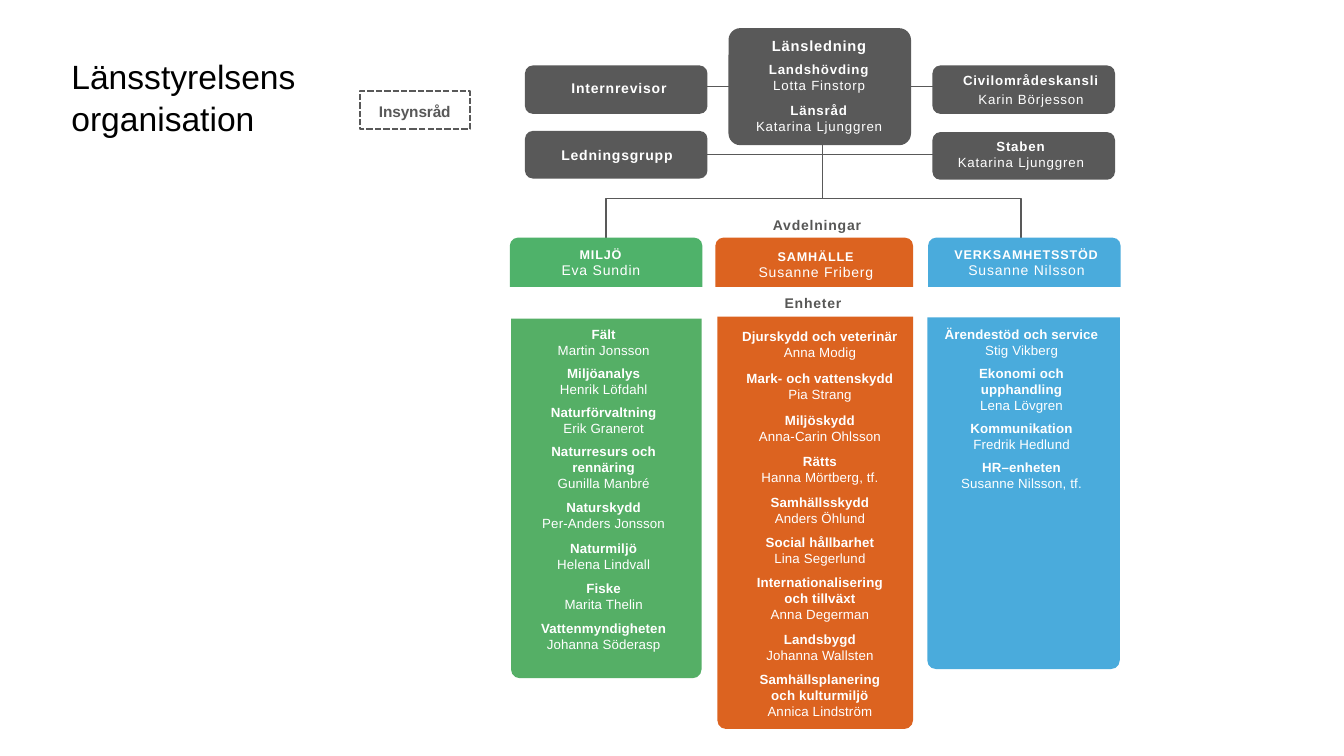
from copy import deepcopy

from lxml import etree
from pptx import Presentation
from pptx.dml.color import RGBColor
from pptx.enum.dml import MSO_LINE
from pptx.enum.shapes import MSO_CONNECTOR, MSO_SHAPE
from pptx.enum.text import PP_ALIGN
from pptx.oxml.ns import qn
from pptx.util import Cm, Pt

BLACK = RGBColor(0x00, 0x00, 0x00)
WHITE = RGBColor(0xFF, 0xFF, 0xFF)
GREY = RGBColor(0x59, 0x59, 0x59)
LABEL_GREY = RGBColor(0x57, 0x57, 0x56)
HEADER_GREEN = RGBColor(0x4F, 0xB2, 0x6A)
LIST_GREEN = RGBColor(0x55, 0xAF, 0x66)
BLUE = RGBColor(0x4A, 0xAB, 0xDC)
ORANGE = RGBColor(0xDC, 0x63, 0x20)
ROUNDED = MSO_SHAPE.ROUNDED_RECTANGLE
HALF_ROUNDED = MSO_SHAPE.ROUND_2_SAME_RECTANGLE
STRAIGHT = MSO_CONNECTOR.STRAIGHT
CENTER = PP_ALIGN.CENTER
LEFT = PP_ALIGN.LEFT

deck = Presentation()
deck.slide_width, deck.slide_height = Cm(33.87), Cm(19.05)
page = deck.slides.add_slide(deck.slide_layouts[6])


def add_panel(kind, area, color, corners):
    """Filled box; corners holds the corner radii in centimetres."""
    panel = page.shapes.add_shape(kind, *[Cm(value) for value in area])
    for index, radius in enumerate(corners):
        panel.adjustments[index] = radius / min(area[2:])
    panel.shadow.inherit = False
    panel.fill.solid()
    panel.fill.fore_color.rgb = color
    panel.line.fill.background()


def add_text(area, entries, sizes=(9.5, 9.5), color=WHITE, tracking=0.6, before=(0, 0),
             after=0, align=CENTER, line_height=None):
    """One paragraph per (heading, name); before is for the first four and the rest."""
    box = page.shapes.add_textbox(*[Cm(value) for value in area])
    frame = box.text_frame
    frame.word_wrap = True
    frame.margin_left = frame.margin_right = frame.margin_bottom = 0
    frame.margin_top = Cm(0.03)
    for index, (heading, name) in enumerate(entries):
        para = frame.add_paragraph() if index else frame.paragraphs[0]
        para.text = f"{heading}\n{name}" if name else heading
        para.alignment = align
        para.space_before = Pt(before[index >= 4] if index else 0)
        para.space_after = Pt(after)
        if line_height:
            para.line_spacing = Pt(line_height)
        for span in para.runs:
            is_name = bool(name) and span.text == name
            span.font.name = "Arial"
            span.font.size = Pt(sizes[is_name])
            span.font.bold = align == CENTER and not is_name
            span.font.color.rgb = color
            span.font._element.set("spc", str(round(tracking * 100)))
        # Line breaks take the size of the heading
        for line_break in para._p.findall(qn("a:br")):
            line_break.append(deepcopy(para.runs[0].font._element))


# Title
add_text((1.8, 1.34, 7, 2.15), [("Länsstyrelsens\norganisation", "")], sizes=(24, 24),
         color=BLACK, tracking=0, align=LEFT, line_height=30)

# Lines of the chart: a bracket to the departments, then straight links
builder = page.shapes.build_freeform(Cm(15.27), Cm(7.11), scale=1.0)
builder.add_line_segments(
    [(Cm(x), Cm(y)) for x, y in ((15.27, 5), (25.73, 5), (25.73, 7.11))], close=False)
bracket = builder.convert_to_shape()
bracket.shadow.inherit = False
bracket.fill.background()
bracket.line.color.rgb = GREY
bracket.line.width = Pt(1)

links = [(17.63, 3.89, 23.5, 3.89), (19.94, 2.18, 24.97, 2.18),
         (13.69, 2.18, 18.72, 2.18), (20.73, 1.04, 20.73, 5)]
for ends in links:
    link = page.shapes.add_connector(STRAIGHT, *[Cm(value) for value in ends])
    link.line.color.rgb = GREY
    link.line.width = Pt(1)
    etree.SubElement(link._element.spPr, qn("a:effectLst"))

# Management boxes
management = [(13.23, 1.65, 4.6, 1.22), (13.23, 3.3, 4.6, 1.2), (23.5, 1.65, 4.6, 1.22),
              (23.5, 3.33, 4.6, 1.2), (18.36, 0.71, 4.6, 2.95)]
for area in management:
    add_panel(ROUNDED, area, GREY, [0.3 if area[3] > 2 else 0.2])

add_text((13.7, 1.98, 3.8, 0.5), [("Internrevisor", "")], sizes=(10, 10))
add_text((13.7, 3.66, 3.7, 0.5), [("Ledningsgrupp", "")], sizes=(10, 10))
add_text((23.5, 1.7, 4.97, 1.1), [("Civilområdeskansli", "Karin Börjesson")],
         line_height=13.7)
add_text((23.9, 3.45, 3.66, 0.85), [("Staben", "Katarina Ljunggren")])
add_text((18.36, 0.89, 4.57, 0.5), [("Länsledning", "")], sizes=(10.5, 10.5))
add_text((18.36, 1.52, 4.57, 0.85), [("Landshövding", "Lotta Finstorp")])
add_text((18.36, 2.54, 4.57, 0.85), [("Länsråd", "Katarina Ljunggren")])

# Advisory council
council = page.shapes.add_shape(
    MSO_SHAPE.RECTANGLE, Cm(9.07), Cm(2.29), Cm(2.77), Cm(0.97))
council.shadow.inherit = False
council.fill.background()
council.line.color.rgb = GREY
council.line.width = Pt(1.5)
council.line.dash_style = MSO_LINE.SQUARE_DOT
add_text((9.07, 2.54, 2.77, 0.5), [("Insynsråd", "")], sizes=(11, 11), color=GREY,
         tracking=-0.1)

# Level labels
for label, left, top in (("Avdelningar", 19.18, 5.42), ("Enheter", 19.08, 7.4)):
    add_text((left, top, 2.82, 0.5), [(label, "")], sizes=(10, 10), color=LABEL_GREY)

# Departments: header panel and text, unit panel and text, colours, spacing, contents
departments = [
    ((12.85, 5.99, 4.85, 1.24), (12.95, 6.18, 4.39, 0.85),
     (12.88, 8.03, 4.8, 9.06), (13.08, 8.2, 4.27, 8.33),
     HEADER_GREEN, LIST_GREEN, (0, 1), ("MILJÖ", "Eva Sundin"),
     [("Fält", "Martin Jonsson"),
      ("Miljöanalys", "Henrik Löfdahl"),
      ("Naturförvaltning", "Erik Granerot"),
      ("Naturresurs och\nrennäring", "Gunilla Manbré"),
      ("Naturskydd", "Per-Anders Jonsson"),
      ("Naturmiljö", "Helena Lindvall"),
      ("Fiske", "Marita Thelin"),
      ("Vattenmyndigheten", "Johanna Söderasp")]),
    ((18.03, 5.99, 4.98, 1.24), (18.43, 6.23, 4.27, 0.85),
     (18.08, 7.98, 4.93, 10.39), (18.49, 8.25, 4.35, 10.64),
     ORANGE, ORANGE, (2, 1), ("SAMHÄLLE", "Susanne Friberg"),
     [("Djurskydd och veterinär", "Anna Modig"),
      ("Mark- och vattenskydd", "Pia Strang"),
      ("Miljöskydd", "Anna-Carin Ohlsson"),
      ("Rätts", "Hanna Mörtberg, tf."),
      ("Samhällsskydd", "Anders Öhlund"),
      ("Social hållbarhet", "Lina Segerlund"),
      ("Internationalisering\noch tillväxt", "Anna Degerman"),
      ("Landsbygd", "Johanna Wallsten"),
      ("Samhällsplanering\noch kulturmiljö", "Annica Lindström")]),
    ((23.39, 5.99, 4.85, 1.24), (23.7, 6.18, 4.34, 0.85),
     (23.37, 8, 4.85, 8.86), (23.6, 8.2, 4.29, 4.34),
     BLUE, BLUE, (0, 0), ("VERKSAMHETSSTÖD", "Susanne Nilsson"),
     [("Ärendestöd och service", "Stig Vikberg"),
      ("Ekonomi och\nupphandling", "Lena Lövgren"),
      ("Kommunikation", "Fredrik Hedlund"),
      ("HR–enheten", "Susanne Nilsson, tf.")]),
]
for (header_area, header_text, list_area, list_text, header_color, list_color,
     before, head, units) in departments:
    add_panel(HALF_ROUNDED, header_area, header_color, [0.2, 0])
    add_text(header_text, [head], sizes=(9, 10))
    add_panel(HALF_ROUNDED, list_area, list_color, [0, 0.22])
    add_text(list_text, units, tracking=0.1, before=before, after=5)

deck.save("out.pptx")
